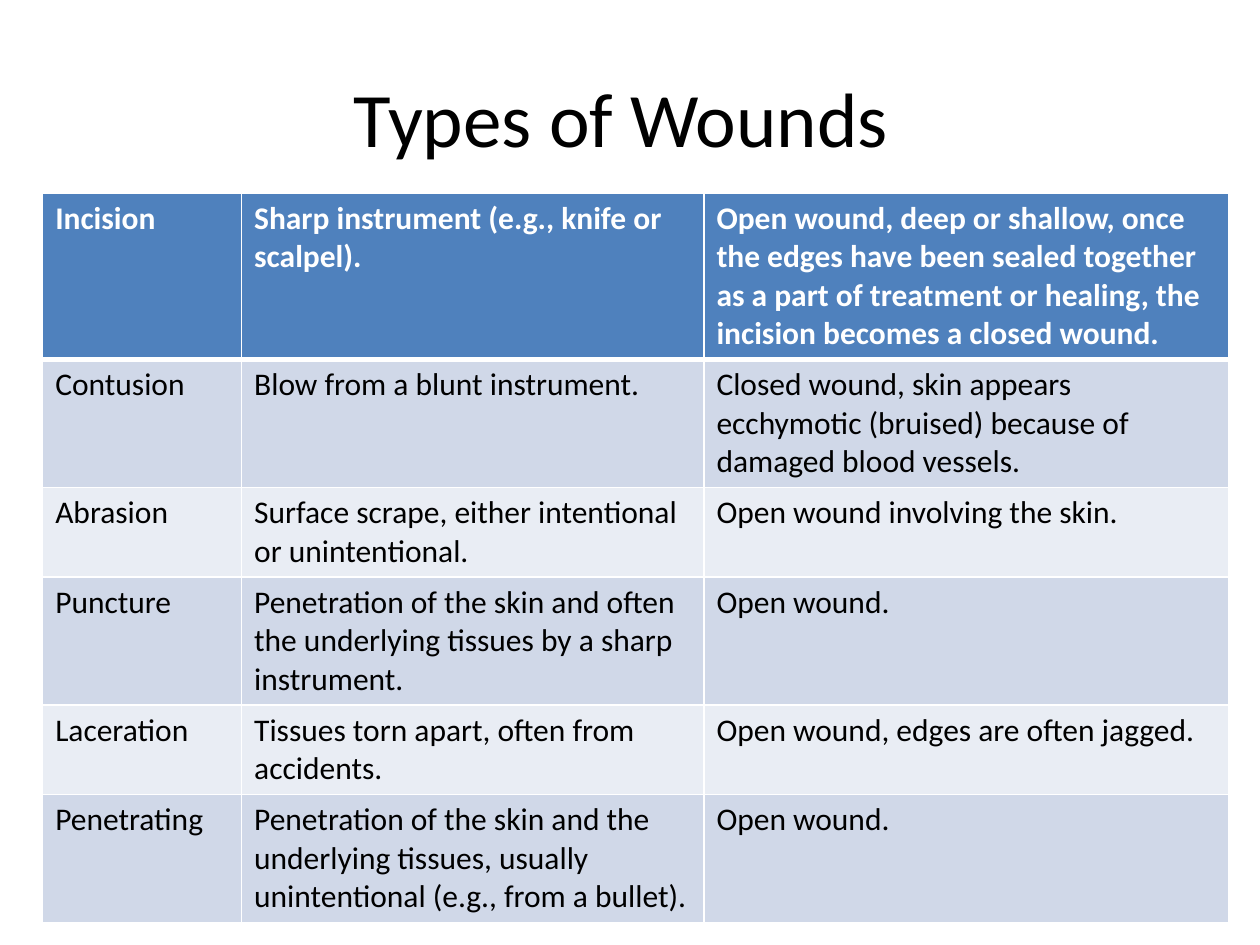
from dataclasses import dataclass

from lxml import etree
from pptx import Presentation
from pptx.dml.color import RGBColor
from pptx.enum.text import MSO_ANCHOR, PP_ALIGN
from pptx.oxml.ns import qn
from pptx.util import Cm, Pt

CENTER = PP_ALIGN.CENTER
MIDDLE = MSO_ANCHOR.MIDDLE
TITLE_ONLY_LAYOUT = 5


@dataclass(frozen=True)
class Theme:
    font: str = "Calibri"
    title_size: int = 44
    table_size: int = 18
    text: str = "000000"
    header_text: str = "FFFFFF"
    header_fill: str = "4F81BD"
    band_fills: tuple = ("D0D8E8", "E9EDF4")
    border: str = "FFFFFF"
    border_width: int = 1
    header_border_width: int = 3


THEME = Theme()

TITLE_BOX = (1.27, 0.76, 22.86, 3.18)
TABLE_BOX = (0.86, 3.89, 23.92, 14.48)
COLUMN_WIDTHS = (4.01, 9.32, 10.59)
MINIMUM_ROW_HEIGHT = 1.04

WOUNDS = [
    ("Incision", "Sharp instrument (e.g., knife or scalpel).",
     "Open wound, deep or shallow, once the edges have been sealed together "
     "as a part of treatment or healing, the incision becomes a closed wound."),
    ("Contusion", "Blow from a blunt instrument.",
     "Closed wound, skin appears ecchymotic (bruised) because of damaged blood vessels."),
    ("Abrasion", "Surface scrape, either intentional or unintentional.",
     "Open wound involving the skin."),
    ("Puncture",
     "Penetration of the skin and often the underlying tissues by a sharp instrument.",
     "Open wound."),
    ("Laceration", "Tissues torn apart, often from accidents.",
     "Open wound, edges are often jagged."),
    ("Penetrating",
     "Penetration of the skin and the underlying tissues, usually unintentional "
     "(e.g., from a bullet).",
     "Open wound."),
]


def add_run(paragraph, text, size, color, bold=False):
    run = paragraph.add_run()
    run.text = text
    run.font.name = THEME.font
    run.font.size = Pt(size)
    run.font.bold = bold
    run.font.color.rgb = RGBColor.from_string(color)


def add_cell_borders(cell, top_width, bottom_width):
    properties = cell._tc.get_or_add_tcPr()
    widths = {"a:lnL": THEME.border_width, "a:lnR": THEME.border_width,
              "a:lnT": top_width, "a:lnB": bottom_width}
    for tag, width in widths.items():
        line = etree.SubElement(properties, qn(tag), w=str(Pt(width)))
        fill = etree.SubElement(line, qn("a:solidFill"))
        etree.SubElement(fill, qn("a:srgbClr"), val=THEME.border)


def place_title(slide, box, text):
    title = slide.shapes.title
    title.left, title.top, title.width, title.height = map(Cm, box)
    title.text_frame.vertical_anchor = MIDDLE
    paragraph = title.text_frame.paragraphs[0]
    paragraph.alignment = CENTER
    add_run(paragraph, text, THEME.title_size, THEME.text)


def fill_cell(cell, text, row_index):
    is_header = row_index == 0
    thin, thick = THEME.border_width, THEME.header_border_width
    add_cell_borders(cell, thick if row_index == 1 else thin, thick if is_header else thin)
    band = THEME.band_fills[(row_index - 1) % len(THEME.band_fills)]
    cell.fill.solid()
    cell.fill.fore_color.rgb = RGBColor.from_string(THEME.header_fill if is_header else band)
    add_run(cell.text_frame.paragraphs[0], text, THEME.table_size,
            THEME.header_text if is_header else THEME.text, bold=is_header)


def place_wound_table(slide, box, rows):
    frame = slide.shapes.add_table(len(rows), len(COLUMN_WIDTHS), *map(Cm, box))
    table = frame.table
    for column, width in zip(table.columns, COLUMN_WIDTHS):
        column.width = Cm(width)
    for row_index, texts in enumerate(rows):
        row = table.rows[row_index]
        row.height = Cm(MINIMUM_ROW_HEIGHT)
        for cell, text in zip(row.cells, texts):
            fill_cell(cell, text, row_index)
    frame.height = Cm(box[3])


def main():
    presentation = Presentation()
    presentation.slide_width, presentation.slide_height = Cm(25.4), Cm(19.05)
    slide = presentation.slides.add_slide(presentation.slide_layouts[TITLE_ONLY_LAYOUT])
    place_title(slide, TITLE_BOX, "Types of Wounds ")
    place_wound_table(slide, TABLE_BOX, WOUNDS)
    presentation.save("out.pptx")


if __name__ == "__main__":
    main()
